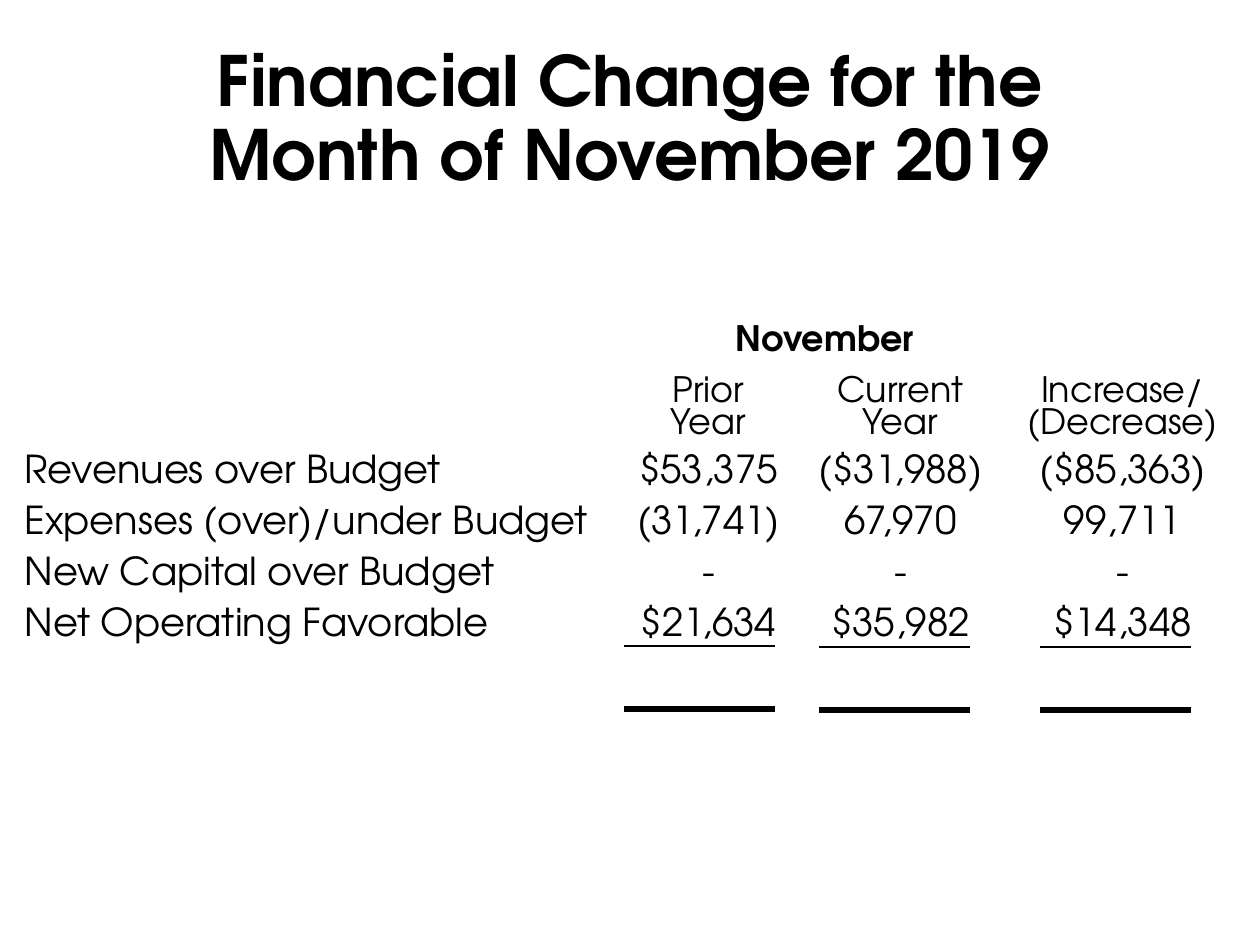
"""Build the slide on the financial change for November 2019."""
from dataclasses import dataclass

from lxml.etree import SubElement
from pptx import Presentation
from pptx.dml.color import RGBColor
from pptx.enum.shapes import MSO_CONNECTOR
from pptx.enum.text import MSO_ANCHOR, PP_ALIGN
from pptx.oxml.ns import qn
from pptx.util import Emu, Pt

BLACK = RGBColor(0, 0, 0)
FONT = "TeX Gyre Adventor"
PX = 914400 / 126


@dataclass(frozen=True)
class Entry:
    row: int
    column: int
    text: str
    size: float = 22
    bold: bool = False
    align: PP_ALIGN = PP_ALIGN.CENTER


@dataclass(frozen=True)
class Rule:
    left: int
    top: int
    weight: float


COLUMN_WIDTHS = (602, 189, 195, 38, 98, 113)
ROW_HEIGHTS = (50, 79, 51, 51, 51, 51, 51)
RULE_WIDTH = 151
HEADINGS = ("Prior\nYear", "Current Year", "Increase/ (Decrease)")
FIGURES = (
    ("Revenues over Budget", "$53,375", "($31,988)", "($85,363)"),
    ("Expenses (over)/under Budget", "(31,741)", "67,970", "99,711"),
    ("New Capital over Budget", "-", "-", "-"),
    ("Net Operating Favorable", "$21,634", "$35,982", "$14,348"),
)
ENTRIES = [
    Entry(0, 1, "November", 20, True),
    *(Entry(1, column, text, 20) for column, text in enumerate(HEADINGS, 1)),
    *(
        Entry(row, column, text, align=PP_ALIGN.CENTER if column else PP_ALIGN.LEFT)
        for row, texts in enumerate(FIGURES, 2)
        for column, text in enumerate(texts)
    ),
]
RULES = [
    Rule(left, top + shift, weight)
    for top, weight in ((646, 1.25), (709, 3))
    for left, shift in ((624, 0), (819, 1), (1040, 1))
]


def px(length: int) -> Emu:
    return Emu(round(length * PX))


def write(frame, entry: Entry, spacing: float = 1.0) -> None:
    frame.text = entry.text
    for para in frame.paragraphs:
        para.alignment = entry.align
        para.line_spacing = spacing
        font = para.font
        font.name, font.size, font.bold = FONT, Pt(entry.size), entry.bold
        font.color.rgb = BLACK


def add_title(page) -> None:
    box = page.shapes.add_textbox(px(113), px(40), px(1034), px(252))
    frame = box.text_frame
    frame.word_wrap = True
    frame.vertical_anchor = MSO_ANCHOR.TOP
    write(frame, Entry(0, 0, "Financial Change for the\vMonth of November 2019", 39.6, True), 0.9)


def add_figures(page) -> None:
    table = page.shapes.add_table(
        len(ROW_HEIGHTS), len(COLUMN_WIDTHS),
        px(12), px(319), px(sum(COLUMN_WIDTHS)), px(sum(ROW_HEIGHTS)),
    ).table
    table.horz_banding = False
    for column, width in zip(table.columns, COLUMN_WIDTHS):
        column.width = px(width)
    for row, height in zip(table.rows, ROW_HEIGHTS):
        row.height = px(height)
    for cell in table.iter_cells():
        cell.fill.background()
    table.cell(0, 1).merge(table.cell(0, 3))
    for row in range(1, len(ROW_HEIGHTS)):
        table.cell(row, 3).merge(table.cell(row, 5))
    for entry in ENTRIES:
        write(table.cell(entry.row, entry.column).text_frame, entry)


def add_rule(page, rule: Rule) -> None:
    line = page.shapes.add_connector(
        MSO_CONNECTOR.STRAIGHT,
        px(rule.left), px(rule.top), px(rule.left + RULE_WIDTH), px(rule.top),
    )
    line.line.color.rgb = BLACK
    line.line.width = Pt(rule.weight)
    SubElement(line._element.spPr, qn("a:effectLst"))


def main() -> None:
    deck = Presentation()
    deck.slide_width, deck.slide_height = px(1260), px(945)
    page = deck.slides.add_slide(deck.slide_layouts[6])
    add_figures(page)
    add_title(page)
    for rule in RULES:
        add_rule(page, rule)
    deck.save("out.pptx")


if __name__ == "__main__":
    main()
